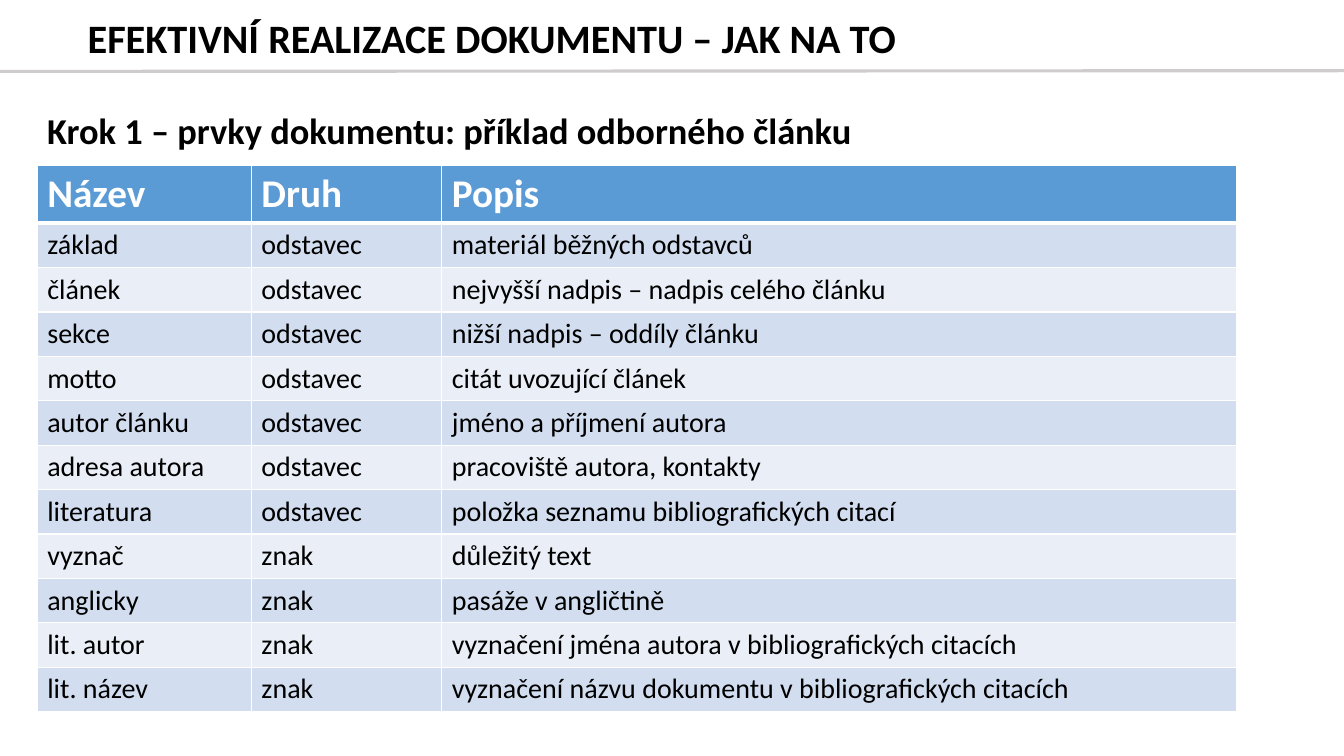
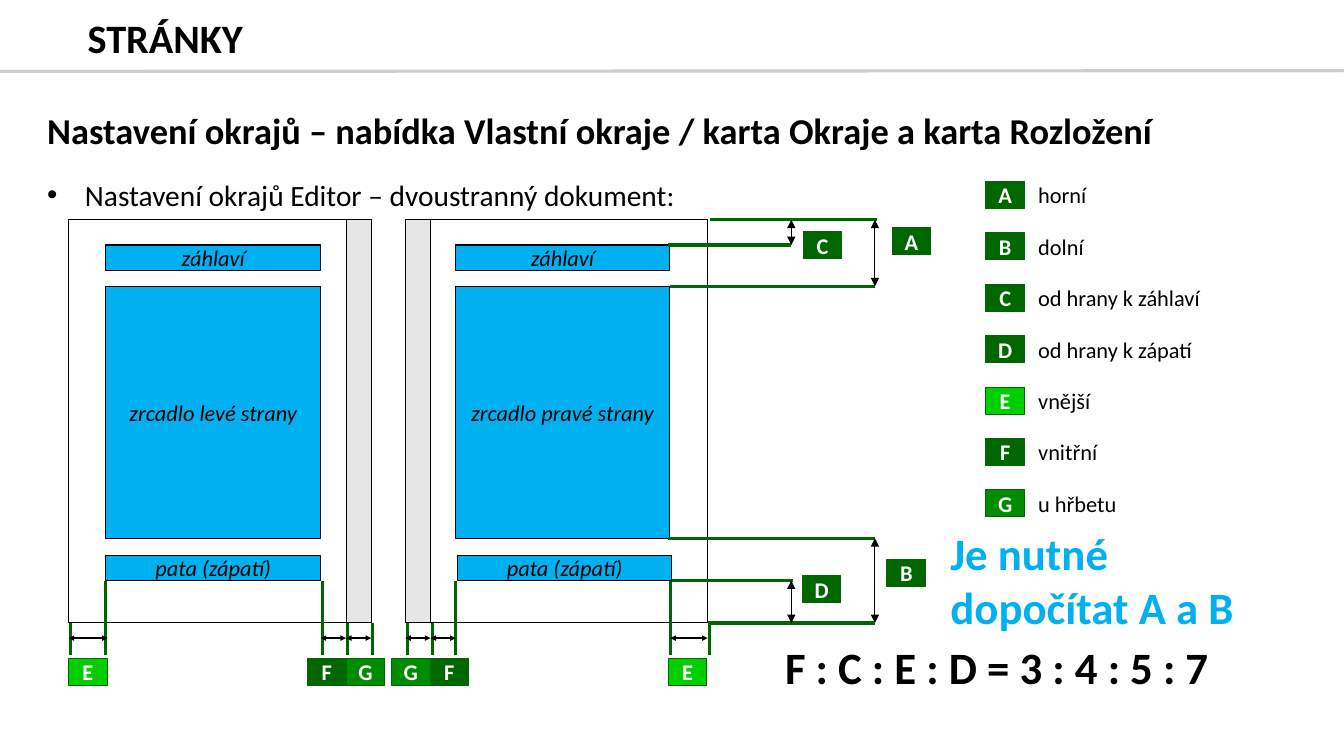
from lxml.etree import SubElement
from pptx import Presentation
from pptx.dml.color import RGBColor as RGB
from pptx.enum.shapes import MSO_CONNECTOR as CONN, MSO_SHAPE as SHAPE
from pptx.enum.text import MSO_ANCHOR as ANCHOR, PP_ALIGN as ALIGN
from pptx.oxml.ns import qn
from pptx.util import Pt


class Theme:
    font = "Calibri"
    black, white, rule = "000000", "FFFFFF", "CECCCC"
    head, bands = "5B9BD5", ("D2DEEF", "EAEFF7")
    blue, spine = "00B0F0", "E7E6E6"
    dark, mid, bright = "006600", "008C00", "00CE00"
    title, heading, bullet, callout, label = 28.8, 26, 21, 32, 16
    table_head, table_body = 28, 20


def add_box(s, x, y, w, h, text="", fill=None, line=Theme.black, align=ALIGN.LEFT,
            anchor=ANCHOR.TOP, inset=(7.2, 3.6, 7.2, 3.6), wrap=True, spacing=1.0, **font):
    """Add a bordered rectangle, or a plain text box when there is no fill."""
    area = [Pt(v) for v in (x, y, w, h)]
    if fill:
        sp = s.shapes.add_shape(SHAPE.RECTANGLE, *area)
        sp.shadow.inherit = False
        sp.fill.solid()
        sp.fill.fore_color.rgb = RGB.from_string(fill)
        sp.line.color.rgb = RGB.from_string(line)
        sp.line.width = Pt(0.75)
    else:
        sp = s.shapes.add_textbox(*area)
    tf = sp.text_frame
    tf.word_wrap, tf.vertical_anchor = wrap, anchor
    for side, v in zip(("left", "top", "right", "bottom"), inset):
        setattr(tf, f"margin_{side}", Pt(v))
    if text:
        tf.text = text
        p = tf.paragraphs[0]
        p.alignment, p.line_spacing = align, spacing
        look = {"name": Theme.font, "size": Theme.label, "color": Theme.black} | font
        for r in p.runs:
            r.font.color.rgb = RGB.from_string(look["color"])
            for key, v in look.items():
                if key != "color":
                    setattr(r.font, key, Pt(v) if key == "size" else v)
    return sp


def add_line(s, x1, y1, x2, y2, color=Theme.dark, width=2.25, arrows=None):
    """Add a straight line; arrows gives the size of the heads at both ends."""
    c = s.shapes.add_connector(CONN.STRAIGHT, Pt(x1), Pt(y1), Pt(x2), Pt(y2))
    c.line.color.rgb = RGB.from_string(color)
    c.line.width = Pt(width)
    if arrows:
        ln = c.line._get_or_add_ln()
        for end in ("a:headEnd", "a:tailEnd"):
            SubElement(ln, qn(end), type="triangle", w=arrows, len=arrows)
    SubElement(c._element.spPr, qn("a:effectLst"))


prs = Presentation()
prs.slide_width, prs.slide_height = Pt(960), Pt(540)

# Shared header
HEADERS = [
    ("EFEKTIVNÍ REALIZACE DOKUMENTU – JAK NA TO",
     "Krok 1 – prvky dokumentu: příklad odborného článku"),
    ("STRÁNKY",
     "Nastavení okrajů – nabídka Vlastní okraje / karta Okraje a karta Rozložení"),
]
for title, heading in HEADERS:
    s = prs.slides.add_slide(prs.slide_layouts[6])
    add_line(s, 0, 51, 960, 50.5, Theme.rule)
    add_box(s, 0, 9.4, 944.6, 38.9, title, anchor=ANCHOR.MIDDLE, spacing=0.9,
            inset=(62.6, 3.6, 7.2, 3.6), size=Theme.title, bold=True)
    add_box(s, 26.6, 77, 857, 39.6, heading, spacing=0.9, size=Theme.heading, bold=True)
elements_slide, pages_slide = prs.slides

# Slide 1: table of document elements
ROWS = [
    ("Název", "Druh", "Popis"),
    ("základ", "odstavec", "materiál běžných odstavců"),
    ("článek", "odstavec", "nejvyšší nadpis – nadpis celého článku"),
    ("sekce", "odstavec", "nižší nadpis – oddíly článku"),
    ("motto", "odstavec", "citát uvozující článek"),
    ("autor článku", "odstavec", "jméno a příjmení autora"),
    ("adresa autora", "odstavec", "pracoviště autora, kontakty"),
    ("literatura", "odstavec", "položka seznamu bibliografických citací"),
    ("vyznač", "znak", "důležitý text"),
    ("anglicky", "znak", "pasáže v angličtině"),
    ("lit. autor", "znak", "vyznačení jména autora v bibliografických citacích"),
    ("lit. název", "znak", "vyznačení názvu dokumentu v bibliografických citacích"),
]
table = elements_slide.shapes.add_table(len(ROWS), 3, Pt(26.6), Pt(118.3), Pt(857), Pt(390)).table
table.horz_banding = False
for col, w in zip(table.columns, (153, 136, 568)):
    col.width = Pt(w)
for i, row in enumerate(ROWS):
    is_head = i == 0
    table.rows[i].height = Pt(41.1 if is_head else 31.72)
    for j, text in enumerate(row):
        cell = table.cell(i, j)
        cell.text = text
        if is_head:
            border = SubElement(cell._tc.get_or_add_tcPr(), qn("a:lnB"), w=str(Pt(3)))
            SubElement(SubElement(border, qn("a:solidFill")), qn("a:srgbClr"), val=Theme.white)
        cell.fill.solid()
        cell.fill.fore_color.rgb = RGB.from_string(Theme.head if is_head else Theme.bands[(i - 1) % 2])
        f = cell.text_frame.paragraphs[0].runs[0].font
        f.name, f.bold = Theme.font, is_head
        f.size = Pt(Theme.table_head if is_head else Theme.table_body)
        f.color.rgb = RGB.from_string(Theme.white if is_head else Theme.black)

# Slide 2: margins of a double-sided document
s = pages_slide
sp = add_box(s, 26.6, 116.6, 857, 380, "Nastavení okrajů Editor – dvoustranný dokument:",
             spacing=1.25, size=Theme.bullet)
pPr = sp.text_frame.paragraphs[0]._p.get_or_add_pPr()
pPr.set("marL", str(Pt(27)))
pPr.set("indent", str(-Pt(27)))
SubElement(pPr, qn("a:buFont"), typeface="Arial")
SubElement(pPr, qn("a:buChar"), char="•")

PAGE_TOP, PAGE_H, PAGE_W, SPINE_W = 157, 288, 198, 18
PAGE_END = PAGE_TOP + PAGE_H
HEAD_TOP, BODY_TOP, BODY_END, FOOT_TOP, FOOT_END = 175, 204.5, 384.5, 396.7, 414.7
# page x, spine x, field x, footer x, field width, body text
PAGES = [
    (49.2, 247.2, 75.6, 75.6, 153.4, "zrcadlo levé strany"),
    (307.5, 289.5, 325.5, 327, 152.6, "zrcadlo pravé strany"),
]
for page_x, spine_x, field_x, foot_x, field_w, body in PAGES:
    add_box(s, spine_x, PAGE_TOP, SPINE_W, PAGE_H, fill=Theme.spine)
    add_box(s, page_x, PAGE_TOP, PAGE_W, PAGE_H, fill=Theme.white)
    for x, top, end, text in (
        (field_x, HEAD_TOP, HEAD_TOP + 18, "záhlaví"),
        (field_x, BODY_TOP, BODY_END, body),
        (foot_x, FOOT_TOP, FOOT_END, "pata (zápatí)"),
    ):
        add_box(s, x, top, field_w, end - top, text, fill=Theme.blue, wrap=False,
                align=ALIGN.CENTER, anchor=ANCHOR.MIDDLE, italic=True)

# Guides and dimension arrows
INNER_X, OUTER_X = 565.2, 625
for x1, x2, y in (
    (507, OUTER_X + 1.4, PAGE_TOP), (477.4, INNER_X, HEAD_TOP), (478.8, OUTER_X, BODY_TOP),
    (477.4, OUTER_X, BODY_END), (480, INNER_X + 1.4, FOOT_END), (505.5, OUTER_X, PAGE_END),
):
    add_line(s, x1, y, x2, y)
for top, xs in (
    (FOOT_END, (75.6, 230.4, 325.5, 478.8)),
    (PAGE_END, (50.4, 248.4, 266.4, 290.9, 308.9, 506.9)),
):
    for x in xs:
        add_line(s, x, top, x, 468)
for x, y1, y2 in (
    (OUTER_X, PAGE_TOP, BODY_TOP), (OUTER_X, BODY_END, PAGE_END),
    (INNER_X, PAGE_TOP, HEAD_TOP), (INNER_X, FOOT_END, PAGE_END),
):
    add_line(s, x, y1, x, y2, Theme.black, 0.75, arrows="med")
for x1, x2 in ((49, 77), (229, 247.2), (265.2, 247.2), (289.5, 307.5), (325.5, 307.5), (478.8, 505.5)):
    add_line(s, x1, 455.8, x2, 455.8, Theme.black, 1, arrows="sm")

# Letter tags and legend
LEGEND = {
    "A": ("horní", Theme.dark),
    "B": ("dolní", Theme.dark),
    "C": ("od hrany k záhlaví", Theme.dark),
    "D": ("od hrany k zápatí", Theme.dark),
    "E": ("vnější", Theme.bright),
    "F": ("vnitřní", Theme.dark),
    "G": ("u hřbetu", Theme.mid),
}
TAG_W, TAG_H, TAG_ROW = 27.6, 19.4, 470.2
tags = [("A", 637.2, 162.7), ("B", 633.6, 399.6), ("C", 573.8, 165.6), ("D", 573.1, 411.1)]
tags += [(letter, x, TAG_ROW) for letter, x in zip("EFGGFE", (49, 219.6, 247.2, 279.6, 307.2, 477.4))]
for i, (letter, (label, _)) in enumerate(LEGEND.items()):
    y = 129.6 + 36.72 * i
    tags.append((letter, 704.2, y))
    add_box(s, 741.6, y, 160, TAG_H, label, anchor=ANCHOR.MIDDLE, inset=(0, 0, 0, 0))
for letter, x, y in tags:
    add_box(s, x, y, TAG_W, TAG_H, letter, fill=LEGEND[letter][1], line=Theme.dark,
            align=ALIGN.CENTER, anchor=ANCHOR.MIDDLE, inset=(0, 0, 0, 0),
            color=Theme.white, bold=True)

add_box(s, 553.7, 453.6, 336.2, 46, "F : C : E : D = 3 : 4 : 5 : 7", size=Theme.callout, bold=True)
add_box(s, 671.8, 372.2, 218.9, 85, "Je nutné\vdopočítat A a B", wrap=False,
        size=Theme.callout, color=Theme.blue, bold=True)

prs.save("out.pptx")
